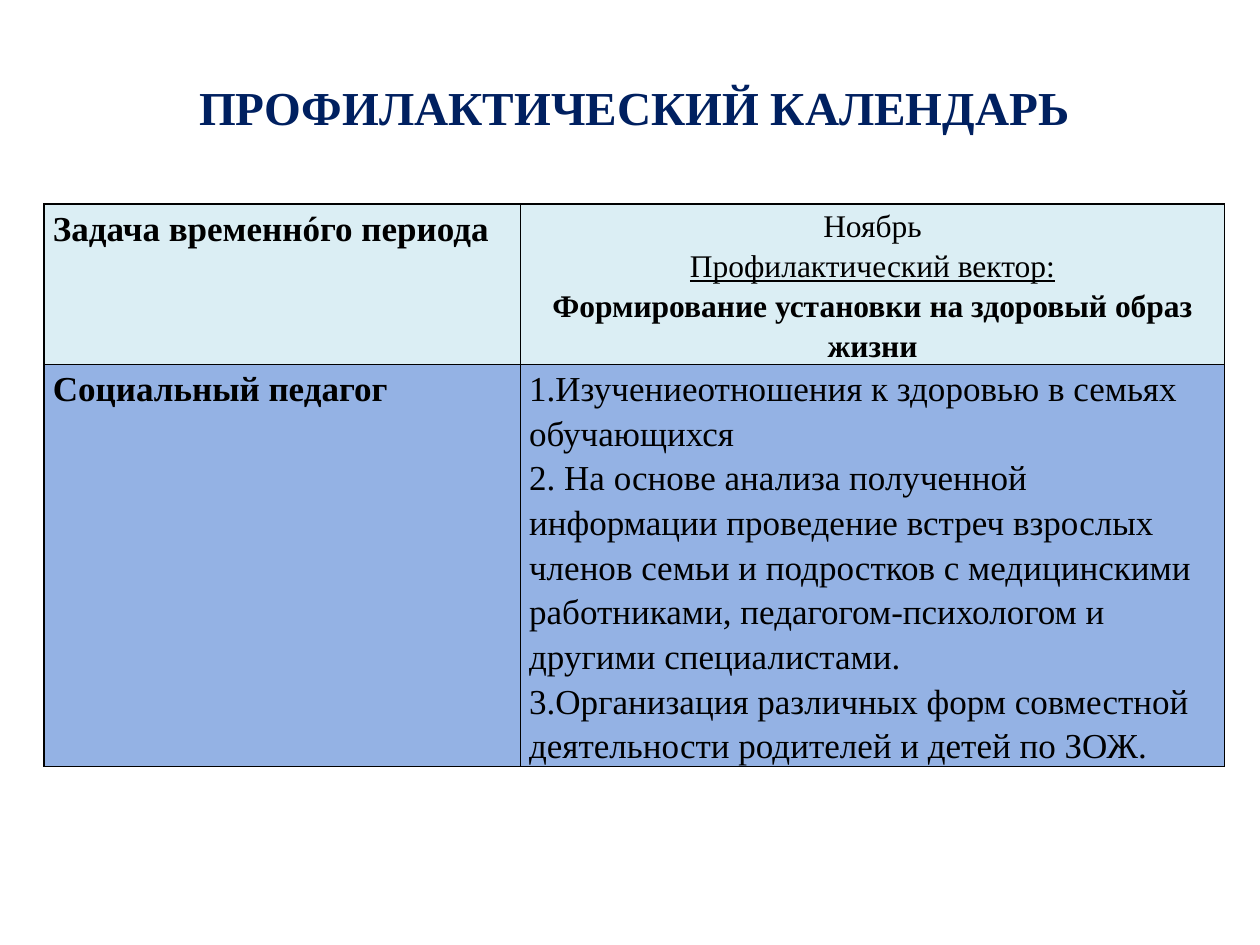
"""Build a slide with a preventive calendar table."""
from lxml import etree
from pptx import Presentation
from pptx.dml.color import RGBColor
from pptx.enum import text
from pptx.oxml import ns
from pptx.util import Inches, Pt

NAVY = RGBColor(0x00, 0x20, 0x60)
BLACK = RGBColor(0x00, 0x00, 0x00)
PALE_BLUE = RGBColor(0xDB, 0xEE, 0xF4)
MID_BLUE = RGBColor(0x94, 0xB2, 0xE4)
FONT = "Times New Roman"


def format_paragraph(paragraph, size, color, bold, underline=False):
    for run in paragraph.runs:
        run.font.name = FONT
        run.font.size = Pt(size)
        run.font.color.rgb = color
        run.font.bold = bold
        run.font.underline = underline


def add_borders(cell):
    properties = cell._tc.get_or_add_tcPr()
    for index, side in enumerate(("lnL", "lnR", "lnT", "lnB")):
        line = etree.Element(ns.qn(f"a:{side}"), w=str(Pt(1)))
        fill = etree.SubElement(line, ns.qn("a:solidFill"))
        etree.SubElement(fill, ns.qn("a:srgbClr"), val=str(BLACK))
        properties.insert(index, line)


presentation = Presentation()
presentation.slide_width = Inches(10)
presentation.slide_height = Inches(7.5)
slide = presentation.slides.add_slide(presentation.slide_layouts[5])

title = slide.shapes.title
title.left, title.top = Inches(0.5), Inches(0.22)
title.width, title.height = Inches(9.07), Inches(1.25)
title.text_frame.text = "ПРОФИЛАКТИЧЕСКИЙ КАЛЕНДАРЬ"
title.text_frame.vertical_anchor = text.MSO_ANCHOR.MIDDLE
title.text_frame.paragraphs[0].alignment = text.PP_ALIGN.CENTER
format_paragraph(title.text_frame.paragraphs[0], 27, NAVY, True)

calendar_rows = [
    (PALE_BLUE, 1.27, [
        ["Задача временнóго периода"],
        ["Ноябрь",
         "Профилактический вектор:",
         "Формирование установки на здоровый образ жизни"],
    ]),
    (MID_BLUE, 3.19, [
        ["Социальный педагог"],
        ["1.Изучениеотношения к здоровью в семьях обучающихся",
         "2. На основе анализа полученной информации проведение встреч "
         "взрослых членов семьи и подростков с медицинскими работниками, "
         "педагогом-психологом и другими специалистами.",
         "3.Организация различных форм совместной деятельности родителей "
         "и детей по ЗОЖ."],
    ]),
]

calendar = slide.shapes.add_table(
    2, 2, Inches(0.35), Inches(1.62), Inches(9.37), Inches(4.46)).table
for column, width in zip(calendar.columns, (3.78, 5.59)):
    column.width = Inches(width)

for row_index, (color, height, contents) in enumerate(calendar_rows):
    calendar.rows[row_index].height = Inches(height)
    for column_index, lines in enumerate(contents):
        cell = calendar.cell(row_index, column_index)
        cell.fill.solid()
        cell.fill.fore_color.rgb = color
        cell.margin_left = cell.margin_right = Inches(0.07)
        cell.margin_top = cell.margin_bottom = 0
        add_borders(cell)
        cell.text_frame.text = "\n".join(lines)
        month_cell = (row_index, column_index) == (0, 1)
        for line_index, paragraph in enumerate(cell.text_frame.paragraphs):
            paragraph.line_spacing = 1.15
            paragraph.alignment = (
                text.PP_ALIGN.CENTER if month_cell else text.PP_ALIGN.LEFT)
            format_paragraph(
                paragraph, 18 if month_cell else 20, BLACK,
                bold=column_index == 0 or month_cell and line_index == 2,
                underline=month_cell and line_index == 1)

presentation.save("out.pptx")
